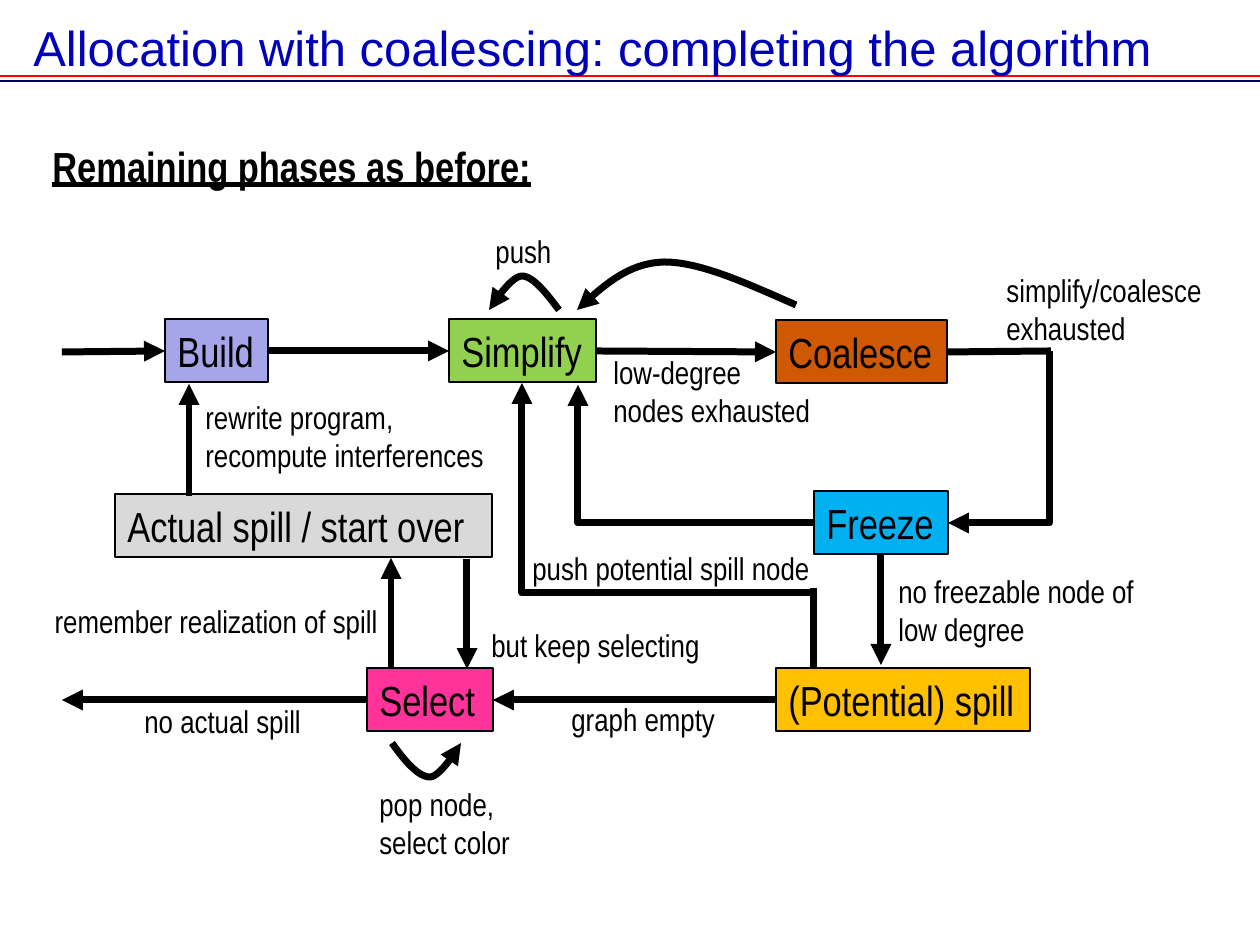
from dataclasses import dataclass
from typing import NamedTuple

from lxml import etree
from pptx import Presentation
from pptx.dml.color import RGBColor
from pptx.enum.shapes import MSO_CONNECTOR, MSO_SHAPE
from pptx.enum.text import MSO_ANCHOR, PP_ALIGN
from pptx.oxml.ns import qn
from pptx.util import Emu, Pt

STRAIGHT = MSO_CONNECTOR.STRAIGHT
RECTANGLE = MSO_SHAPE.RECTANGLE
LEFT, RIGHT = PP_ALIGN.LEFT, PP_ALIGN.RIGHT
TOP, MIDDLE = MSO_ANCHOR.TOP, MSO_ANCHOR.MIDDLE
EMU_PER_PX = 914400 / 126
CURVE_STEPS = 16


@dataclass(frozen=True)
class Theme:
    title_font: str = "Arial"
    body_font: str = "Arial Narrow"
    title_size: int = 28
    box_size: int = 24
    label_size: int = 18
    outline: int = 1
    arrow: int = 4
    ink: str = "000000"
    title: str = "0000BA"
    rule_red: str = "FF0000"
    rule_blue: str = "000066"
    build: str = "A5A5E9"
    simplify: str = "92D050"
    coalesce: str = "CE5902"
    freeze: str = "00B0F0"
    potential: str = "FFC000"
    actual: str = "D9D9D9"
    select: str = "FF3399"


THEME = Theme()


class Point(NamedTuple):
    x: float
    y: float


class Phase(NamedTuple):
    text: str
    left: int
    top: int
    width: int
    fill: str


class Label(NamedTuple):
    text: str
    left: int
    top: int
    width: int
    lines: int = 1
    align: PP_ALIGN = LEFT


class Arrow(NamedTuple):
    start: Point
    end: Point
    bent: bool = False  # horizontal first, then vertical
    head: str = "tailEnd"


PHASE_HEIGHT = 63
LABEL_HEIGHTS = {1: 50, 2: 89}

PHASES = [
    Phase("Build", 165, 319, 103, THEME.build),
    Phase("Simplify", 449, 319, 147, THEME.simplify),
    Phase("Coalesce", 776, 320, 171, THEME.coalesce),
    Phase("Freeze", 814, 491, 134, THEME.freeze),
    Phase("(Potential) spill", 776, 668, 254, THEME.potential),
    Phase("Actual spill / start over", 115, 494, 377, THEME.actual),
    Phase("Select", 367, 668, 126, THEME.select),
]

LABELS = [
    Label("no actual spill", 132, 696, 184),
    Label("push potential spill node", 520, 543, 314),
    Label("graph empty", 559, 694, 171),
    Label("remember realization of spill", 21, 596, 369, align=RIGHT),
    Label("but keep selecting", 464, 620, 248, align=RIGHT),
    Label("no freezable node of low degree", 886, 566, 280, 2),
    Label("simplify/coalesce exhausted", 994, 265, 223, 2),
    Label("rewrite program, recompute interferences", 193, 392, 310, 2),
    Label("pop node, select color", 367, 779, 163, 2),
    Label("push", 483, 226, 83),
    Label("low-degree nodes exhausted", 601, 347, 223, 2),
]

ARROWS = [
    Arrow(Point(62, 352), Point(165, 351)),
    Arrow(Point(268, 351), Point(449, 351)),
    Arrow(Point(596, 351), Point(776, 352)),
    Arrow(Point(947, 352), Point(1051, 351), head=""),
    Arrow(Point(948, 523), Point(1050, 351), bent=True, head="headEnd"),
    Arrow(Point(814, 523), Point(578, 385), bent=True),
    Arrow(Point(881, 555), Point(881, 665)),
    Arrow(Point(814, 668), Point(814, 588), head=""),
    Arrow(Point(814, 593), Point(522, 383), bent=True),
    Arrow(Point(776, 700), Point(493, 700)),
    Arrow(Point(367, 700), Point(62, 700)),
    Arrow(Point(467, 559), Point(467, 669)),
    Arrow(Point(391, 667), Point(391, 558)),
    Arrow(Point(189, 496), Point(189, 384)),
]

# Each curve is a start followed by control, control, end for every cubic
CURVES = [
    [(559, 310), (547, 294), (533, 276), (522, 276), (510, 276), (489, 310), (489, 310)],
    [(796, 305), (748, 284), (701, 262), (664, 262), (627, 263), (602, 287), (577, 310)],
    [(392, 743), (404, 760), (418, 777), (430, 777), (441, 777), (461, 743), (461, 743)],
]


def px(length: float) -> Emu:
    return Emu(round(length * EMU_PER_PX))


def write(shape, text: str, *, size: int, font: str = THEME.body_font, color: str = THEME.ink,
          bold: bool = False, underline: bool = False, align: PP_ALIGN = LEFT,
          anchor: MSO_ANCHOR = TOP, wrap: bool = True) -> None:
    frame = shape.text_frame
    frame.word_wrap = wrap
    frame.vertical_anchor = anchor
    para = frame.paragraphs[0]
    para.alignment = align
    span = para.add_run()
    span.text = text
    span.font.name, span.font.size = font, Pt(size)
    span.font.bold, span.font.underline = bold, underline
    span.font.color.rgb = RGBColor.from_string(color)


def add_text(page, left: int, top: int, width: int, height: int, text: str, **style) -> None:
    box = page.shapes.add_textbox(px(left), px(top), px(width), px(height))
    write(box, text, **style)


def style_line(shape, color: str, width: int, head: str = "") -> None:
    shape.line.color.rgb = RGBColor.from_string(color)
    shape.line.width = Pt(width)
    if head:
        line = shape.element.spPr.find(qn("a:ln"))
        etree.SubElement(line, qn(f"a:{head}"), type="triangle")


def add_line(page, arrow: Arrow, color: str = THEME.ink, width: int = THEME.arrow) -> None:
    ends = [px(value) for value in (*arrow.start, *arrow.end)]
    connector = page.shapes.add_connector(STRAIGHT, *ends)
    if arrow.bent:
        connector.element.spPr.find(qn("a:prstGeom")).set("prst", "bentConnector2")
    style_line(connector, color, width, arrow.head)
    etree.SubElement(connector.element.spPr, qn("a:effectLst"))


def add_phase(page, phase: Phase) -> None:
    box = page.shapes.add_shape(RECTANGLE, px(phase.left), px(phase.top),
                                px(phase.width), px(PHASE_HEIGHT))
    box.shadow.inherit = False
    box.fill.solid()
    box.fill.fore_color.rgb = RGBColor.from_string(phase.fill)
    style_line(box, THEME.ink, THEME.outline)
    write(box, phase.text, size=THEME.box_size, wrap=False)


def cubic(t: float, *controls: float) -> float:
    weights = ((1 - t) ** 3, 3 * t * (1 - t) ** 2, 3 * t * t * (1 - t), t ** 3)
    return sum(weight * value for weight, value in zip(weights, controls))


def add_curve(page, knots: list[tuple[int, int]]) -> None:
    points = []
    for first in range(0, len(knots) - 1, 3):
        xs, ys = zip(*knots[first:first + 4])
        for step in range(1, CURVE_STEPS + 1):
            t = step / CURVE_STEPS
            points.append((px(cubic(t, *xs)), px(cubic(t, *ys))))
    outline = page.shapes.build_freeform(px(knots[0][0]), px(knots[0][1]))
    outline.add_line_segments(points, close=False)
    curve = outline.convert_to_shape()
    curve.shadow.inherit = False
    curve.fill.background()
    style_line(curve, THEME.ink, THEME.arrow, "tailEnd")


def main() -> None:
    deck = Presentation()
    deck.slide_width, deck.slide_height = px(1260), px(945)
    page = deck.slides.add_slide(deck.slide_layouts[6])

    # Title, its double rule and the heading
    for y, color in ((76, THEME.rule_red), (81, THEME.rule_blue)):
        add_line(page, Arrow(Point(0, y), Point(1260, y), head=""), color, THEME.outline)
    add_text(page, 21, 10, 1222, 74, "Allocation with coalescing: completing the algorithm",
             size=THEME.title_size, font=THEME.title_font, color=THEME.title, anchor=MIDDLE)
    add_text(page, 40, 134, 509, 63, "Remaining phases as before:",
             size=THEME.box_size, bold=True, underline=True, wrap=False)

    # Phases, the flow between them and its labels
    for phase in PHASES:
        add_phase(page, phase)
    for arrow in ARROWS:
        add_line(page, arrow)
    for knots in CURVES:
        add_curve(page, knots)
    for label in LABELS:
        add_text(page, label.left, label.top, label.width, LABEL_HEIGHTS[label.lines],
                 label.text, size=THEME.label_size, align=label.align)

    deck.save("out.pptx")


if __name__ == "__main__":
    main()
